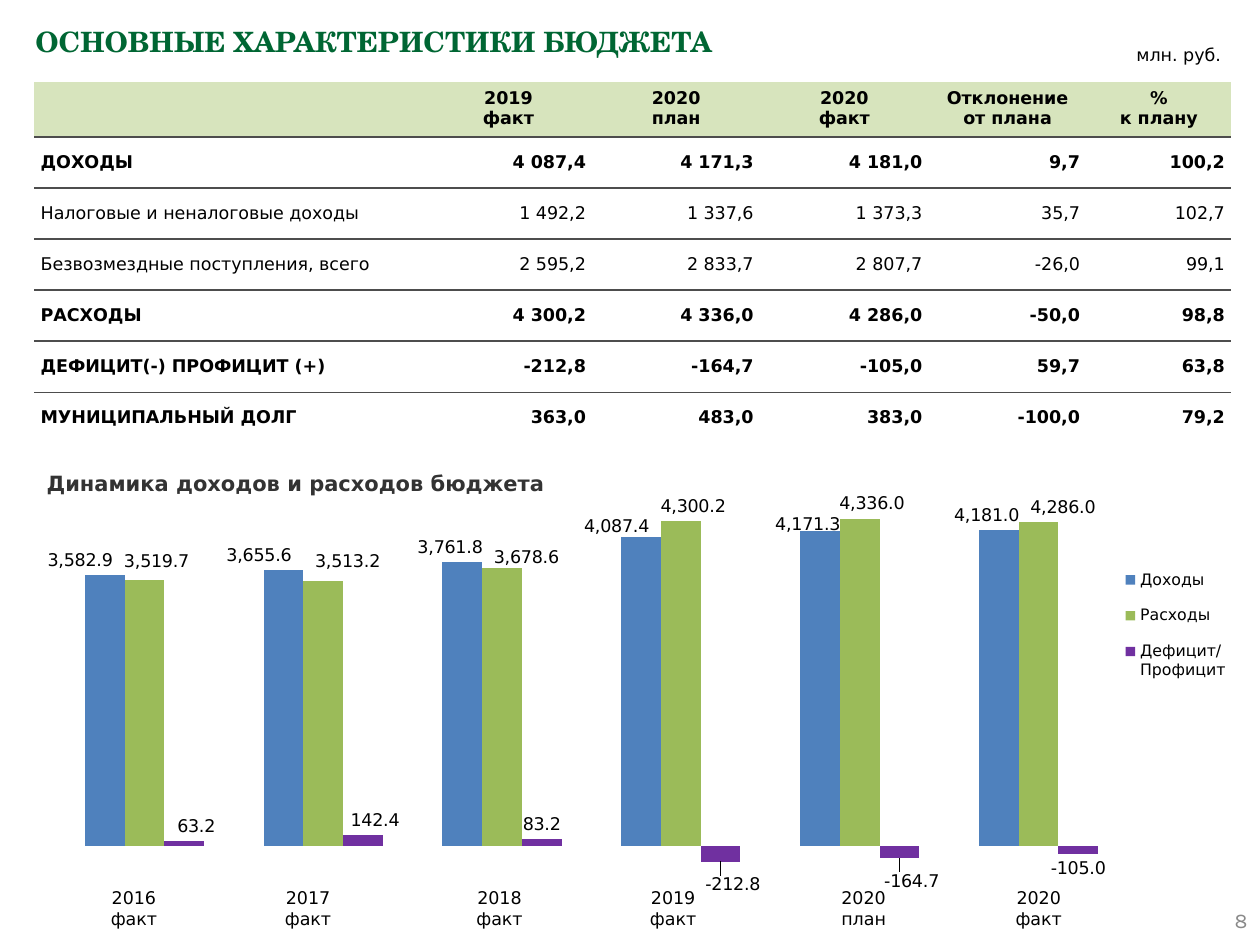
from dataclasses import dataclass

from lxml.etree import SubElement
from pptx import Presentation
from pptx.chart.data import CategoryChartData
from pptx.dml.color import RGBColor
from pptx.enum.chart import XL_CHART_TYPE, XL_LABEL_POSITION, XL_LEGEND_POSITION
from pptx.enum.shapes import MSO_SHAPE
from pptx.enum.text import MSO_ANCHOR, PP_ALIGN
from pptx.oxml.ns import qn
from pptx.util import Cm, Pt


@dataclass(frozen=True)
class Theme:
    heading_font: str = "TeX Gyre Schola"
    body_font: str = "DejaVu Sans"
    number_font: str = "Karla"
    heading: RGBColor = RGBColor(0x00, 0x66, 0x33)
    subheading: RGBColor = RGBColor(0x33, 0x33, 0x33)
    text: RGBColor = RGBColor(0, 0, 0)
    muted: RGBColor = RGBColor(0x89, 0x89, 0x89)
    header_fill: RGBColor = RGBColor(0xD7, 0xE4, 0xBD)
    rule: str = "4D4D4D"
    income: RGBColor = RGBColor(0x4F, 0x81, 0xBD)
    spending: RGBColor = RGBColor(0x9B, 0xBB, 0x59)
    balance: RGBColor = RGBColor(0x70, 0x30, 0xA0)
    heading_size: Pt = Pt(16)
    medium_size: Pt = Pt(12)
    body_size: Pt = Pt(10)
    legend_size: Pt = Pt(9)


theme = Theme()


def write(frame, text, font=theme.body_font, size=theme.body_size, color=theme.text,
          bold=False, align=PP_ALIGN.LEFT, anchor=MSO_ANCHOR.TOP, spacing=None, wrap=True):
    """Fill a text frame, one paragraph per line of text."""
    frame.word_wrap = wrap
    frame.vertical_anchor = anchor
    frame.text = text
    for paragraph in frame.paragraphs:
        paragraph.alignment = align
        paragraph.line_spacing = spacing
        for run in paragraph.runs:
            run.font.name, run.font.size = font, size
            run.font.color.rgb, run.font.bold = color, bold


def add_layout(parent, index, **values):
    """Insert a manual chart layout into parent at the given child index."""
    layout = SubElement(parent, qn("c:layout"))
    parent.insert(index, layout)
    manual = SubElement(layout, qn("c:manualLayout"))
    for tag, value in values.items():
        SubElement(manual, qn(f"c:{tag}")).set("val", str(value))


prs = Presentation()
prs.slide_width, prs.slide_height = Cm(25.4), Cm(19.05)
slide = prs.slides.add_slide(prs.slide_layouts[5])

# Headings
title = slide.shapes.title
title.left, title.top, title.width, title.height = Cm(0.46), Cm(0.36), Cm(15.29), Cm(2.92)
write(title.text_frame, "ОСНОВНЫЕ ХАРАКТЕРИСТИКИ БЮДЖЕТА", font=theme.heading_font,
      size=theme.heading_size, color=theme.heading, bold=True)

page_number = slide.shapes.add_textbox(Cm(19.48), Cm(18.03), Cm(5.92), Cm(1.02))
write(page_number.text_frame, "8", font=theme.number_font, size=theme.medium_size,
      color=theme.muted, align=PP_ALIGN.RIGHT, anchor=MSO_ANCHOR.MIDDLE)

chart_heading = slide.shapes.add_textbox(Cm(0.69), Cm(9.27), Cm(16.74), Cm(0.81))
write(chart_heading.text_frame, "Динамика доходов и расходов бюджета",
      size=theme.medium_size, color=theme.subheading, bold=True, spacing=1.2)

# Chart: name, colour, values, label shifts as fractions of the chart
budget_series = [
    ("Доходы", theme.income, [3582.9, 3655.6, 3761.8, 4087.4, 4171.3, 4181.0],
     [(-0.02, 0), (-0.02, 0), (-0.01, 0), (-0.02, 0.01), (-0.01, 0.02), (-0.01, 0)]),
    ("Расходы", theme.spending, [3519.7, 3513.2, 3678.6, 4300.2, 4336.0, 4286.0],
     [(0.01, -0.01), (0.02, -0.01), (0.02, 0.01), (0.01, 0), (0.01, 0), (0.02, 0)]),
    ("Дефицит/Профицит", theme.balance, [63.2, 142.4, 83.2, -212.8, -164.7, -105.0],
     [(0.01, 0), (0.01, 0), (0, 0), (0.01, 0.02), (0.01, 0.02), (0, 0)]),
]
budget_data = CategoryChartData()
budget_data.categories = ["1", "2", "3", "4", "5", "6"]
for name, _, values, _ in budget_series:
    budget_data.add_series(name, values)
chart = slide.shapes.add_chart(XL_CHART_TYPE.COLUMN_CLUSTERED, Cm(0.69), Cm(9.8),
                               Cm(24.61), Cm(8.48), budget_data).chart
chart.has_title = False
chart.font.name, chart.font.size = theme.body_font, theme.body_size
chart.font.color.rgb = theme.text
chart.category_axis.visible = False
chart.value_axis.visible = False
chart.value_axis.has_major_gridlines = False
chart.value_axis.minimum_scale, chart.value_axis.maximum_scale = -500, 4500

plot = chart.plots[0]
plot.gap_width, plot.overlap = 150, 0
plot.vary_by_categories = False
for series, (_, color, values, shifts) in zip(plot.series, budget_series):
    series.invert_if_negative = False
    series.format.fill.solid()
    series.format.fill.fore_color.rgb = color
    number_format = "0.0" if color == theme.balance else "#,##0.0"
    labels = series.data_labels
    labels.show_value = True
    labels.number_format, labels.number_format_is_linked = number_format, False
    labels.position = XL_LABEL_POSITION.OUTSIDE_END
    for index, (dx, dy) in enumerate(shifts):
        label = series.points[index].data_label
        label.font.name, label.font.size = theme.body_font, theme.body_size
        label.font.color.rgb = theme.text
        label.position = XL_LABEL_POSITION.OUTSIDE_END
    for label_xml, (dx, dy) in zip(labels._element.findall(qn("c:dLbl")), shifts):
        add_layout(label_xml, 1, x=dx, y=dy)
        format_xml = SubElement(label_xml, qn("c:numFmt"))
        format_xml.set("formatCode", number_format)
        format_xml.set("sourceLinked", "0")
        label_xml.insert(2, format_xml)

chart.has_legend = True
legend = chart.legend
legend.position = XL_LEGEND_POSITION.RIGHT
legend.include_in_layout = False
legend.font.name, legend.font.size = theme.body_font, theme.legend_size
legend.font.color.rgb = theme.text
add_layout(legend._element, 1, xMode="edge", yMode="edge", x=0.88, y=0.16, w=0.11, h=0.34)

plot_area = chart._chartSpace.find(".//" + qn("c:plotArea"))
for old_layout in plot_area.findall(qn("c:layout")):
    plot_area.remove(old_layout)
add_layout(plot_area, 0, layoutTarget="inner", xMode="edge", yMode="edge",
           x=0.017, y=0.048, w=0.879, h=0.897)

# Table
budget_rows = [
    ["", "2019\nфакт", "2020\nплан", "2020\nфакт", "Отклонение\nот плана", "%\nк плану"],
    ["ДОХОДЫ", "4 087,4", "4 171,3", "4 181,0", "9,7", "100,2"],
    ["Налоговые и неналоговые доходы", "1 492,2", "1 337,6", "1 373,3", "35,7", "102,7"],
    ["Безвозмездные поступления, всего", "2 595,2", "2 833,7", "2 807,7", "-26,0", "99,1"],
    ["РАСХОДЫ", "4 300,2", "4 336,0", "4 286,0", "-50,0", "98,8"],
    ["ДЕФИЦИТ(-) ПРОФИЦИТ (+)", "-212,8", "-164,7", "-105,0", "59,7", "63,8"],
    ["МУНИЦИПАЛЬНЫЙ ДОЛГ", "363,0", "483,0", "383,0", "-100,0", "79,2"],
]
detail_rows = (2, 3)
last_row = len(budget_rows) - 1
table = slide.shapes.add_table(len(budget_rows), 6, Cm(0.69), Cm(1.65), Cm(24.15), Cm(7.33)).table
table.first_row = table.horz_banding = False
table._tbl.tblPr.find(qn("a:tableStyleId")).text = "{2D5ABB26-0587-4C30-8999-92F81FD0307C}"
for column, width in zip(table.columns, (7.87, 3.38, 3.38, 3.4, 3.18, 2.92)):
    column.width = Cm(width)
for r, row in enumerate(budget_rows):
    table.rows[r].height = Cm(1.03 if r else 1.09)
    for c, text in enumerate(row):
        cell = table.cell(r, c)
        cell.margin_left = cell.margin_right = cell.margin_top = cell.margin_bottom = Cm(0.13)
        if r == 0:
            align, anchor = PP_ALIGN.CENTER, MSO_ANCHOR.TOP
            cell.fill.solid()
            cell.fill.fore_color.rgb = theme.header_fill
        else:
            align = PP_ALIGN.RIGHT if c else PP_ALIGN.LEFT
            anchor = MSO_ANCHOR.MIDDLE
            cell.fill.background()
        write(cell.text_frame, text, bold=r not in detail_rows, align=align)
        cell.vertical_anchor = anchor
        if r < last_row:
            properties = cell._tc.get_or_add_tcPr()
            border = SubElement(properties, qn("a:lnB"), w=str(Pt(1)))
            properties.insert(0, border)
            border_fill = SubElement(border, qn("a:solidFill"))
            SubElement(border_fill, qn("a:srgbClr"), val=theme.rule)

# Year captions under the columns
year_captions = [(1.7, "2016\nфакт"), (5.21, "2017\nфакт"), (9.07, "2018\nфакт"),
                 (12.57, "2019\nфакт"), (16.41, "2020\nплан"), (19.94, "2020\nфакт")]
for left, text in year_captions:
    caption = slide.shapes.add_shape(MSO_SHAPE.PENTAGON, Cm(left), Cm(18.03), Cm(2), Cm(0.54))
    caption.adjustments[0] = 0
    caption.shadow.inherit = False
    caption.fill.background()
    caption.line.fill.background()
    write(caption.text_frame, text, align=PP_ALIGN.CENTER, anchor=MSO_ANCHOR.MIDDLE)

unit = slide.shapes.add_textbox(Cm(22.66), Cm(0.76), Cm(2.24), Cm(0.69))
write(unit.text_frame, "млн. руб.", wrap=False)

prs.save("out.pptx")
